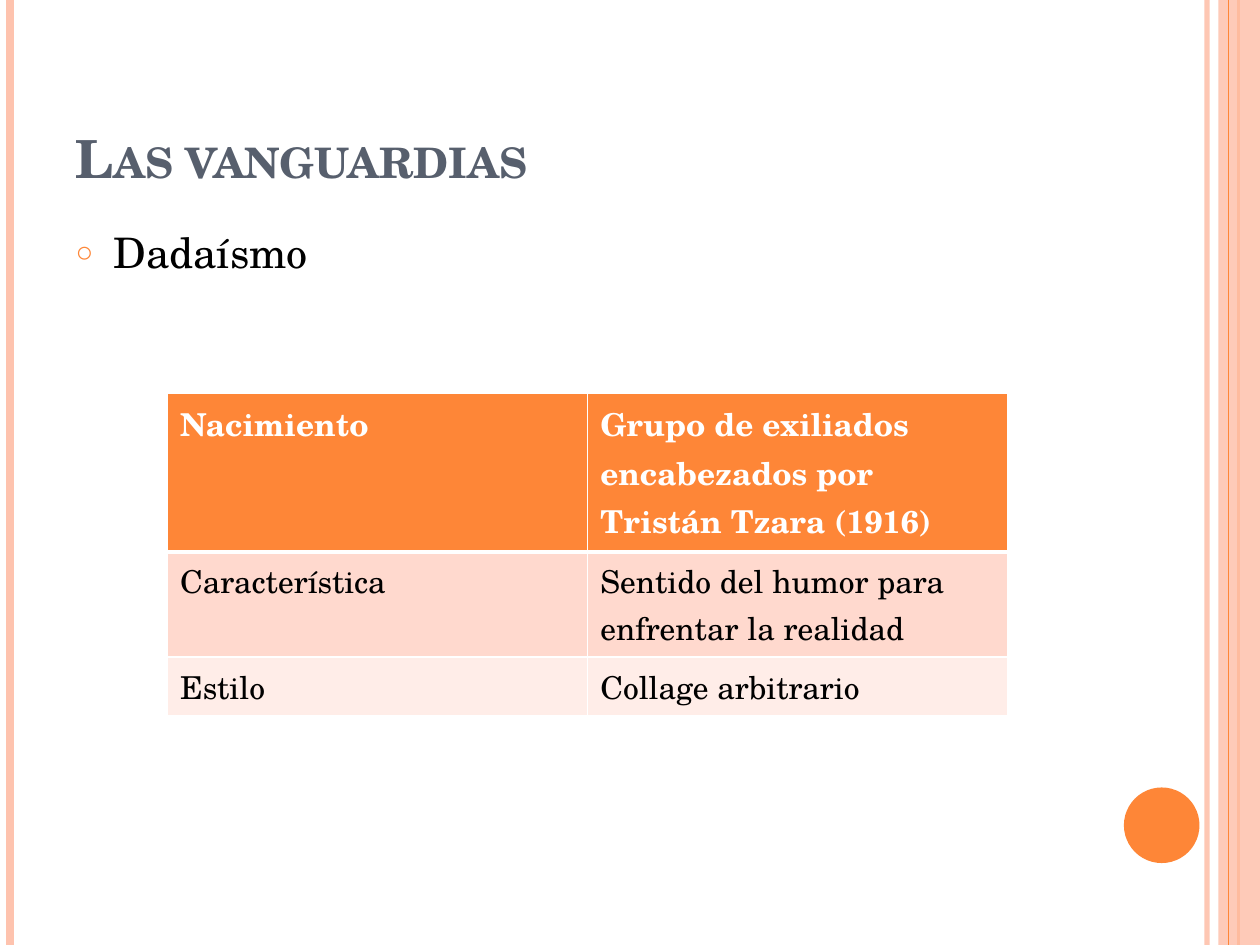
from lxml import etree
from pptx import Presentation
from pptx import util as u
from pptx.dml.color import RGBColor
from pptx.enum import shapes, text
from pptx.oxml.ns import qn

COLORS = {
    "orange": "FE8637", "peach": "FEC3AE", "slate": "575F6D", "black": "000000",
    "white": "FFFFFF", "band_dark": "FFD9CE", "band_light": "FFEDE8",
}
FONT = "TeX Gyre Schola"
ROWS = [
    ("Nacimiento", "Grupo de exiliados encabezados por Tristán Tzara (1916)"),
    ("Característica", "Sentido del humor para enfrentar la realidad"),
    ("Estilo", "Collage arbitrario"),
]
ROW_FILLS = ["orange", "band_dark", "band_light"]


def rgb(name):
    return RGBColor.from_string(COLORS[name])


def add_node(parent, tag, **attributes):
    return etree.SubElement(parent, qn(tag), attributes)


def set_alpha(element, percent):
    color = element.find(".//" + qn("a:srgbClr"))
    add_node(color, "a:alpha", val=str(percent * 1000))


class SlideBuilder:
    def __init__(self, deck):
        self.page = deck.slides.add_slide(deck.slide_layouts[1])

    def place(self, shape, left, top, width, height):
        box = {"left": left, "top": top, "width": width, "height": height}
        for name, value in box.items():
            setattr(shape, name, u.Inches(value))

    def add_span(self, para, words, size, color, bold=False):
        span = para.add_run()
        span.text = words
        style = {"name": FONT, "size": u.Pt(size), "bold": bold}
        for name, value in style.items():
            setattr(span.font, name, value)
        span.font.color.rgb = rgb(color)
        return span

    def stripe(self, x, width, color, alpha=100):
        """Draw a vertical line over the full slide height."""
        line = self.page.shapes.add_connector(
            shapes.MSO_CONNECTOR.STRAIGHT,
            u.Inches(x), 0, u.Inches(x), u.Inches(7.5))
        line.line.color.rgb = rgb(color)
        line.line.width = u.Pt(width)
        if alpha < 100:
            set_alpha(line._element.spPr, alpha)
        add_node(line._element.spPr, "a:effectLst")

    def solid(self, kind, box, color, alpha=100):
        shape = self.page.shapes.add_shape(kind, *map(u.Inches, box))
        shape.shadow.inherit = False
        shape.fill.solid()
        shape.fill.fore_color.rgb = rgb(color)
        shape.line.fill.background()
        if alpha < 100:
            set_alpha(shape._element.spPr, alpha)

    def title(self, words, box):
        holder = self.page.shapes.title
        self.place(holder, *box)
        holder.text_frame.vertical_anchor = text.MSO_ANCHOR.BOTTOM
        para = holder.text_frame.paragraphs[0]
        para.alignment = text.PP_ALIGN.LEFT
        span = self.add_span(para, words, 30, "slate", bold=True)
        span._r.get_or_add_rPr().set("cap", "small")

    def bullets(self, items, box):
        holder = self.page.placeholders[1]
        self.place(holder, *box)
        frame = holder.text_frame
        for index, words in enumerate(items):
            para = frame.add_paragraph() if index else frame.paragraphs[0]
            para.space_before = u.Pt(6)
            props = para._p.get_or_add_pPr()
            props.set("marL", str(u.Inches(0.3)))
            props.set("indent", str(u.Inches(-0.3)))
            add_node(add_node(props, "a:buClr"), "a:srgbClr", val=COLORS["orange"])
            add_node(props, "a:buSzPct", val="70000")
            add_node(props, "a:buChar", char="○")
            self.add_span(para, words, 24, "black")

    def borders(self, cell, top, bottom):
        widths = {"L": 1, "R": 1, "T": top, "B": bottom}
        props = cell._tc.get_or_add_tcPr()
        for side, width in widths.items():
            line = add_node(props, "a:ln" + side, w=str(u.Pt(width)))
            add_node(add_node(line, "a:solidFill"), "a:srgbClr", val=COLORS["white"])

    def table(self, rows, fills, box, row_height):
        frame = self.page.shapes.add_table(
            len(rows), len(rows[0]), *map(u.Inches, box))
        for r, values in enumerate(rows):
            frame.table.rows[r].height = u.Inches(row_height)
            header = r == 0
            for c, words in enumerate(values):
                cell = frame.table.cell(r, c)
                self.borders(cell, 3 if r == 1 else 1, 3 if header else 1)
                cell.fill.solid()
                cell.fill.fore_color.rgb = rgb(fills[r])
                self.add_span(cell.text_frame.paragraphs[0], words, 18,
                              "white" if header else "black", bold=header)
        frame.height = u.Inches(box[3])


def main():
    deck = Presentation()
    deck.slide_width, deck.slide_height = u.Inches(10), u.Inches(7.5)
    slide = SlideBuilder(deck)

    slide.stripe(9.58, 3, "peach", alpha=93)
    slide.stripe(0.08, 4.5, "peach")
    slide.stripe(9.83, 1.5, "orange")
    slide.solid(shapes.MSO_SHAPE.RECTANGLE, (9.67, 0, 0.33, 7.5), "peach", alpha=87)
    slide.stripe(9.75, 0.75, "orange")
    slide.solid(shapes.MSO_SHAPE.OVAL, (8.92, 6.25, 0.6, 0.6), "orange")

    slide.title("Las vanguardias", (0.5, 0.3, 8.17, 1.25))
    slide.bullets(["Dadaísmo"], (0.5, 1.75, 8.17, 5.33))
    slide.table(ROWS, ROW_FILLS, (1.33, 3.12, 6.67, 2.11), 0.41)
    deck.save("out.pptx")


if __name__ == "__main__":
    main()
